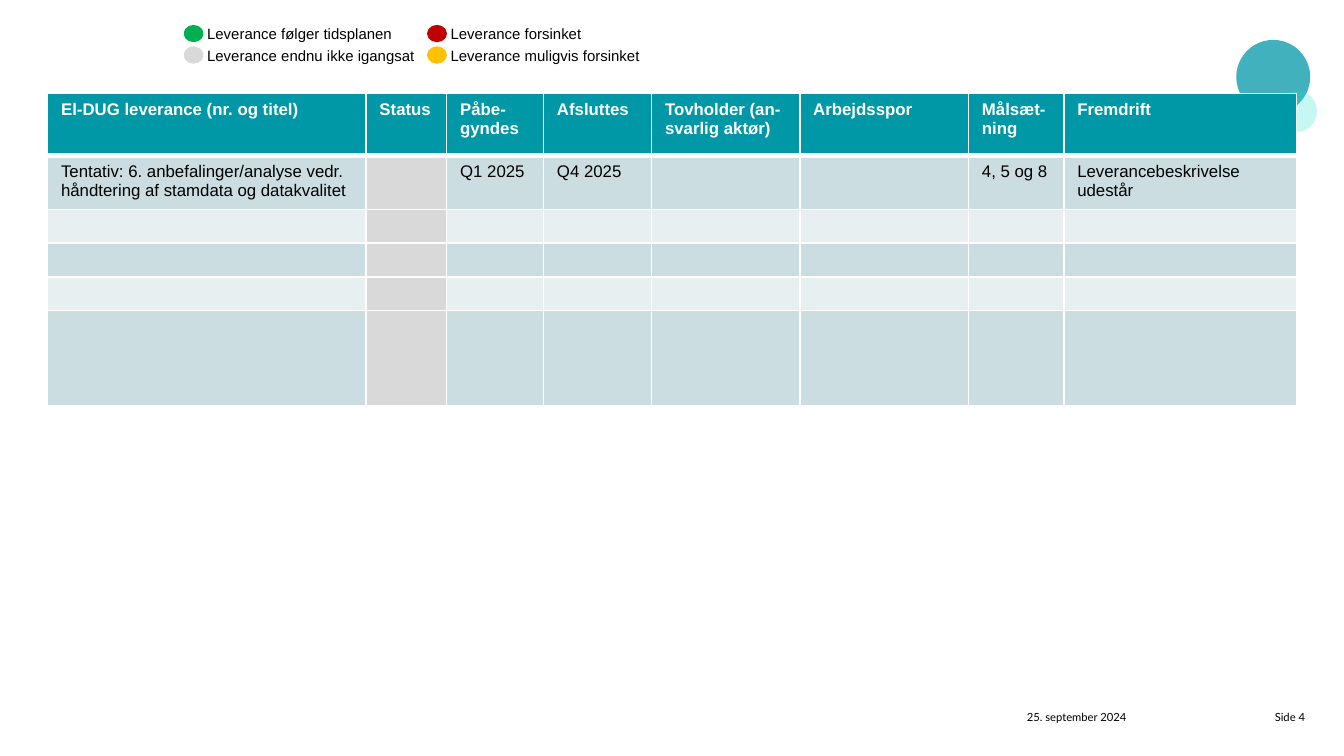
from lxml.etree import SubElement
from pptx import Presentation
from pptx.dml.color import RGBColor
from pptx.enum.shapes import MSO_SHAPE
from pptx.enum.text import MSO_AUTO_SIZE, PP_ALIGN
from pptx.oxml.ns import qn
from pptx.util import Pt

WHITE = RGBColor(0xFF, 0xFF, 0xFF)
BLACK = RGBColor(0, 0, 0)
TEAL = RGBColor(0x00, 0x97, 0xA7)
MINT = RGBColor(0x1D, 0xE2, 0xCD)
DARK = RGBColor(0xCC, 0xDD, 0xE1)
LIGHT = RGBColor(0xE7, 0xEF, 0xF1)
GRAY = RGBColor(0xD9, 0xD9, 0xD9)
GREEN = RGBColor(0x00, 0xB0, 0x50)
RED = RGBColor(0xC0, 0x00, 0x00)
AMBER = RGBColor(0xFF, 0xC0, 0x00)

# left, top, size, colour, opacity in percent
BUBBLES = [(662.3, 21.4, 39.6, TEAL, 75), (683.3, 48.5, 22.3, MINT, 25)]

# column, row, colour, label, label width
LEGEND = [
    (0, 0, GREEN, "Leverance følger tidsplanen", 115.2),
    (0, 1, GRAY, "Leverance endnu ikke igangsat", 127.4),
    (1, 0, RED, "Leverance forsinket", 87.8),
    (1, 1, AMBER, "Leverance muligvis forsinket", 116.6),
]

# left, width, text, alignment
FOOTER = [
    (543.6, 97.2, "25. september 2024", PP_ALIGN.LEFT),
    (642.2, 63.4, "Side 4", PP_ALIGN.RIGHT),
]

HEAD = ["El-DUG leverance (nr. og titel)", "Status", "Påbe-gyndes", "Afsluttes",
        "Tovholder (an-svarlig aktør)", "Arbejdsspor", "Målsæt-ning", "Fremdrift"]
TASK = ["Tentativ: 6. anbefalinger/analyse vedr. håndtering af stamdata og datakvalitet",
        "", "Q1 2025", "Q4 2025", "", "", "4, 5 og 8", "Leverancebeskrivelse udestår"]
ROWS = [HEAD, TASK] + [[""] * len(HEAD)] * 4
WIDTHS = [170.6, 43.2, 51.9, 57.9, 79.4, 90.4, 51.1, 124.6]
HEIGHTS = [33.3, 27.9, 17.3, 17.3, 17.3, 51.3]
STATUS = HEAD.index("Status")


def write(para, text, size, font, color, bold=False):
    run = para.add_run()
    run.text = text
    run.font.size = Pt(size)
    run.font.name = font
    run.font.bold = bold
    run.font.color.rgb = color


def add_dot(slide, left, top, width, height, color):
    dot = slide.shapes.add_shape(MSO_SHAPE.OVAL, Pt(left), Pt(top), Pt(width), Pt(height))
    dot.shadow.inherit = False
    dot.fill.solid()
    dot.fill.fore_color.rgb = color
    return dot


def add_bubbles(slide):
    for left, top, size, color, opacity in BUBBLES:
        dot = add_dot(slide, left, top, size, size, color)
        dot.line.fill.background()
        tone = dot.fill._xPr.find(qn("a:solidFill"))[0]
        SubElement(tone, qn("a:alpha"), val=str(opacity * 1000))


def add_footer(slide):
    for left, width, text, align in FOOTER:
        box = slide.shapes.add_textbox(Pt(left), Pt(377.3), Pt(width), Pt(21.6))
        frame = box.text_frame
        frame.word_wrap = True
        frame.margin_left = frame.margin_right = Pt(6.5)
        frame.margin_top = frame.margin_bottom = Pt(3.2)
        para = frame.paragraphs[0]
        para.alignment = align
        write(para, text, 6, "Lato", BLACK)


def add_borders(cell, bottom):
    props = cell._tc.get_or_add_tcPr()
    for side, width in (("L", 1), ("R", 1), ("T", 1), ("B", bottom)):
        line = SubElement(props, qn("a:ln" + side), w=str(Pt(width)))
        fill = SubElement(line, qn("a:solidFill"))
        SubElement(fill, qn("a:srgbClr"), val=str(WHITE))


def fill_cell(cell, text, row, col):
    head = row == 0
    add_borders(cell, 3 if head else 1)
    band = DARK if row % 2 else LIGHT
    cell.fill.solid()
    cell.fill.fore_color.rgb = TEAL if head else GRAY if col == STATUS else band
    para = cell.text_frame.paragraphs[0]
    if text:
        write(para, text, 9, "Arial", WHITE if head else BLACK, head)
    else:
        # An empty cell needs its own text size to stay low
        SubElement(para._p, qn("a:endParaRPr"), sz="900")


def add_plan(slide):
    frame = slide.shapes.add_table(len(ROWS), len(HEAD), Pt(25.5), Pt(50),
                                   Pt(sum(WIDTHS)), Pt(sum(HEIGHTS)))
    table = frame.table
    table.horz_banding = False
    for col, width in zip(table.columns, WIDTHS):
        col.width = Pt(width)
    for row, height in zip(table.rows, HEIGHTS):
        row.height = Pt(height)
    for r, texts in enumerate(ROWS):
        for c, text in enumerate(texts):
            fill_cell(table.cell(r, c), text, r, c)


def add_legend(slide):
    for col, row, color, label, width in LEGEND:
        left, top = 99.4 + 130.4 * col, 14.4 + 11.5 * row
        dot = add_dot(slide, left, top, 8.6, 7.2, color)
        dot.line.color.rgb = color
        dot.line.width = Pt(2)
        box = slide.shapes.add_textbox(Pt(left + 4.5), Pt(top - 4.5), Pt(width), Pt(17))
        box.text_frame.word_wrap = False
        box.text_frame.auto_size = MSO_AUTO_SIZE.SHAPE_TO_FIT_TEXT
        write(box.text_frame.paragraphs[0], label, 8, "Arial", BLACK)


def main():
    deck = Presentation()
    deck.slide_width, deck.slide_height = Pt(720), Pt(405)
    slide = deck.slides.add_slide(deck.slide_layouts[6])
    add_bubbles(slide)
    add_footer(slide)
    add_plan(slide)
    add_legend(slide)
    deck.save("out.pptx")


if __name__ == "__main__":
    main()
